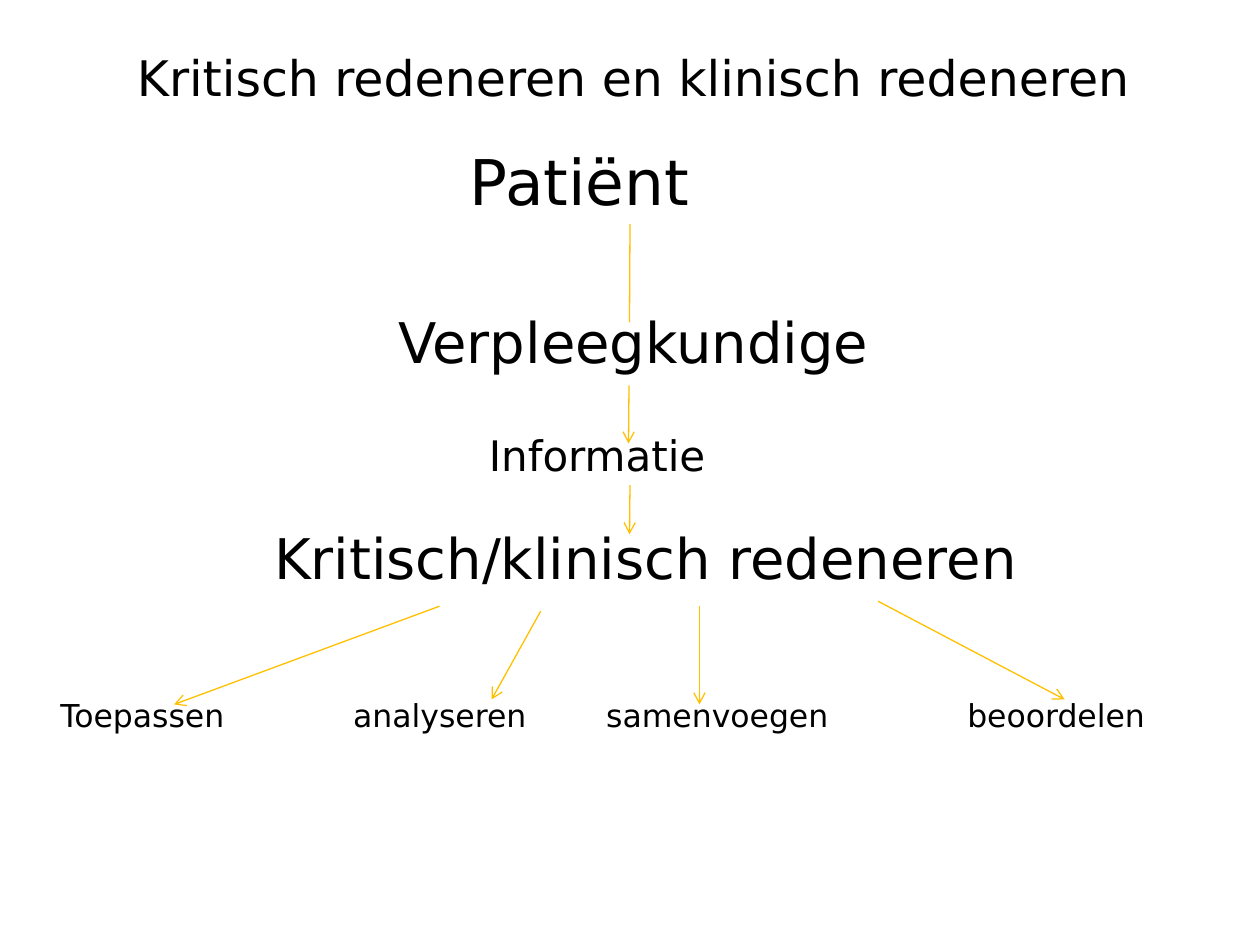
from dataclasses import dataclass

from lxml import etree
from pptx import Presentation
from pptx import util as u
from pptx.dml.color import RGBColor
from pptx.enum import shapes, text
from pptx.oxml import ns

BLACK = RGBColor(0x00, 0x00, 0x00)
GOLD = RGBColor(0xFF, 0xC0, 0x00)
FONT = "DejaVu Sans"
SKILL_TOP, SKILL_WIDTH, SKILL_HEIGHT = 13.9, 5, 1.2


@dataclass(frozen=True)
class Step:
    wording: str
    size: int
    indent: float
    before: float


@dataclass(frozen=True)
class Skill:
    wording: str
    left: float


@dataclass(frozen=True)
class Line:
    start: tuple[float, float]
    end: tuple[float, float]
    arrow: bool = True


STEPS = (
    Step("Patiënt", 36, 8.25, 0),
    Step("Verpleegkundige", 32, 6.81, 51.5),
    Step("Informatie", 24, 8.63, 31),
    Step("Kritisch/klinisch redeneren", 32, 4.3, 25),
)

SKILLS = (
    Skill("Toepassen", 0.97),
    Skill("analyseren", 6.87),
    Skill("samenvoegen", 11.97),
    Skill("beoordelen", 19.25),
)

LINES = (
    Line((12.7, 4.52), (12.69, 6.5), arrow=False),
    Line((12.68, 7.77), (12.67, 8.94)),
    Line((12.7, 9.78), (12.69, 10.77)),
    Line((8.86, 12.22), (3.51, 14.2)),
    Line((10.9, 12.32), (9.91, 14.1)),
    Line((14.1, 12.22), (14.1, 14.2)),
    Line((17.7, 12.12), (21.46, 14.1)),
)


def place(shape, left: float, top: float, width: float, height: float) -> None:
    shape.left, shape.top = u.Cm(left), u.Cm(top)
    shape.width, shape.height = u.Cm(width), u.Cm(height)
    shape.text_frame.word_wrap = True
    shape.text_frame.auto_size = text.MSO_AUTO_SIZE.NONE


def write(paragraph, wording: str, *, size: int, align=text.PP_ALIGN.LEFT,
          indent: float = 0, before: float = 0) -> None:
    properties = paragraph._p.get_or_add_pPr()
    properties.set("marL", str(u.Cm(indent)))
    properties.set("indent", "0")
    etree.SubElement(properties, ns.qn("a:buNone"))
    paragraph.alignment = align
    paragraph.space_before = u.Pt(before)
    run = paragraph.add_run()
    run.text = wording
    run.font.name = FONT
    run.font.size = u.Pt(size)
    run.font.color.rgb = BLACK


def draw_skill(slide, skill: Skill) -> None:
    bounds = (skill.left, SKILL_TOP, SKILL_WIDTH, SKILL_HEIGHT)
    box = slide.shapes.add_textbox(*(u.Cm(value) for value in bounds))
    box.text_frame.word_wrap = True
    write(box.text_frame.paragraphs[0], skill.wording, size=18)


def draw_line(slide, line: Line) -> None:
    connector = slide.shapes.add_connector(
        shapes.MSO_CONNECTOR.STRAIGHT,
        *(u.Cm(value) for value in line.start + line.end))
    connector.line.color.rgb = GOLD
    connector.line.width = u.Pt(0.75)
    if line.arrow:
        etree.SubElement(connector.line._get_or_add_ln(), ns.qn("a:tailEnd"), type="arrow")
    etree.SubElement(connector._element.spPr, ns.qn("a:effectLst"))


def main() -> None:
    presentation = Presentation()
    presentation.slide_width, presentation.slide_height = u.Cm(25.4), u.Cm(19.05)
    slide = presentation.slides.add_slide(presentation.slide_layouts[1])

    title = slide.shapes.title
    place(title, 1.7, 0.4, 22.12, 2.29)
    title.text_frame.vertical_anchor = text.MSO_ANCHOR.MIDDLE
    write(title.text_frame.paragraphs[0], "Kritisch redeneren en klinisch redeneren",
          size=28, align=text.PP_ALIGN.CENTER)

    body = slide.placeholders[1]
    place(body, 0.97, 2.74, 23.42, 11)
    frame = body.text_frame
    for index, step in enumerate(STEPS):
        paragraph = frame.add_paragraph() if index else frame.paragraphs[0]
        write(paragraph, step.wording, size=step.size, indent=step.indent,
              before=step.before)

    for skill in SKILLS:
        draw_skill(slide, skill)

    for line in LINES:
        draw_line(slide, line)

    presentation.save("out.pptx")


if __name__ == "__main__":
    main()
